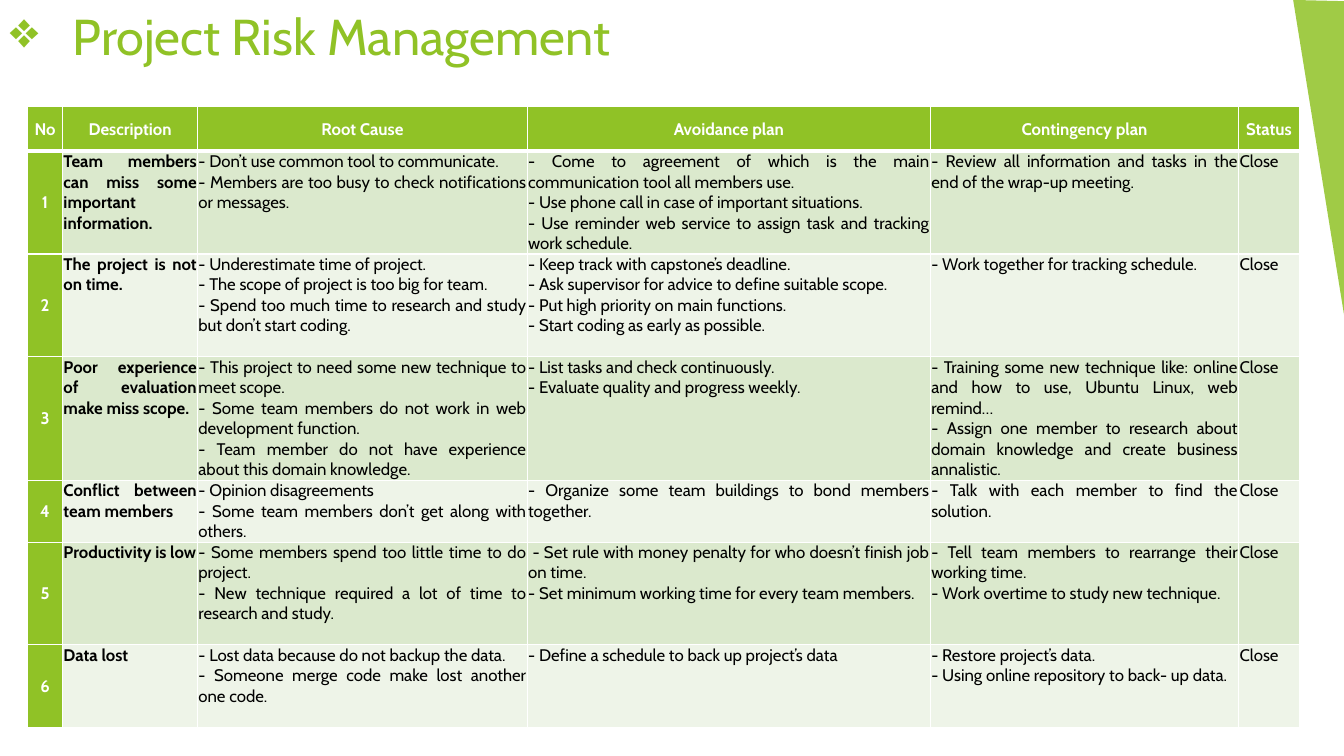
from lxml.etree import SubElement as Sub
from pptx import Presentation
from pptx.dml.color import RGBColor
from pptx.enum.text import MSO_ANCHOR as Anchor, PP_ALIGN as Align
from pptx.oxml.ns import qn
from pptx.util import Cm, Pt

GREEN = RGBColor(0x90, 0xC2, 0x26)
DARK = RGBColor(0xDB, 0xE9, 0xCD)
LIGHT = RGBColor(0xEE, 0xF4, 0xE8)
WHITE = RGBColor(0xFF, 0xFF, 0xFF)
BLACK = RGBColor(0, 0, 0)
FONT = "Cabin"

HEADS = ["No", "Description", "Root Cause", "Avoidance plan", "Contingency plan", "Status"]
WIDTHS = [0.89, 3.4, 8.31, 10.16, 7.77, 1.52]
HEIGHTS = [1.12, 2.59, 2.59, 3.12, 1.55, 2.59, 2.08]
RISKS = [
    ["Team members can miss some important information.",
     "- Don’t use common tool to communicate.\n"
     "- Members are too busy to check notifications or messages.",
     "- Come to agreement of which is the main communication tool all members use.\n"
     "- Use phone call in case of important situations.\n"
     "- Use reminder web service to assign task and tracking work schedule.",
     "- Review all information and tasks in the end of the wrap-up meeting."],
    ["The project is not on time.",
     "- Underestimate time of project.\n"
     "- The scope of project is too big for team.\n"
     "- Spend too much time to research and study but don’t start coding.",
     "- Keep track with capstone’s deadline.\n"
     "- Ask supervisor for advice to define suitable scope.\n"
     "- Put high priority on main functions.\n"
     "- Start coding as early as possible.",
     "- Work together for tracking schedule."],
    ["Poor experience of evaluation make miss scope.",
     "- This project to need some new technique to meet scope.\n"
     "- Some team members do not work in web development function.\n"
     "- Team member do not have experience about this domain knowledge.",
     "- List tasks and check continuously.\n"
     "- Evaluate quality and progress weekly.",
     "- Training some new technique like: online and how to use, Ubuntu Linux, web remind…\n"
     "- Assign one member to research about domain knowledge and create business annalistic."],
    ["Conflict between team members",
     "- Opinion disagreements\n"
     "- Some team members don’t get along with others.",
     "- Organize some team buildings to bond members together.",
     "- Talk with each member to find the solution."],
    ["Productivity is low",
     "- Some members spend too little time to do project.\n"
     "- New technique required a lot of time to research and study.",
     " - Set rule with money penalty for who doesn’t finish job on time.\n"
     "- Set minimum working time for every team members.",
     "- Tell team members to rearrange their working time.\n"
     "- Work overtime to study new technique."],
    ["Data lost",
     "- Lost data because do not backup the data.\n"
     "- Someone merge code make lost another one code.",
     "- Define a schedule to back up project’s data",
     "- Restore project’s data.\n"
     "- Using online repository to back- up data."],
]


def style(par, size, color, bold=False):
    font = par.font
    font.name, font.size, font.bold = FONT, Pt(size), bold
    font.color.rgb = color


def add_edge(cell, side, width):
    line = Sub(cell._tc.get_or_add_tcPr(), qn(f"a:ln{side}"), w=str(Pt(width)))
    fill = Sub(line, qn("a:solidFill"))
    Sub(fill, qn("a:srgbClr"), val=str(WHITE))


prs = Presentation()
prs.slide_width, prs.slide_height = Cm(33.87), Cm(19.05)
slide = prs.slides.add_slide(prs.slide_layouts[6])
shapes = slide.shapes

# Corner wedge
pen = shapes.build_freeform(Cm(33.87), Cm(7.92))
pen.add_line_segments([(Cm(32.59), 0), (Cm(33.87), Cm(0.03))])
wedge = pen.convert_to_shape()
wedge.shadow.inherit = False
wedge.fill.solid()
wedge.fill.fore_color.rgb = GREEN
wedge.line.fill.background()
tint = wedge._element.spPr.find(f"{qn('a:solidFill')}/{qn('a:srgbClr')}")
Sub(tint, qn("a:alpha"), val="85000")

# Title
title = shapes.add_textbox(0, 0, Cm(23.88), Cm(1.85))
frame = title.text_frame
frame.word_wrap = True
frame.text = "Project Risk Management"
par = frame.paragraphs[0]
props = par._p.get_or_add_pPr()
props.set("marL", str(Cm(1.58)))
props.set("indent", str(-Cm(1.58)))
Sub(props, qn("a:buChar"), char="❖")
style(par, 36, GREEN)

# Risk table
grid = shapes.add_table(len(HEIGHTS), len(WIDTHS), Cm(0.69), Cm(2.69),
                        Cm(sum(WIDTHS)), Cm(sum(HEIGHTS))).table
for col, width in zip(grid.columns, WIDTHS):
    col.width = Cm(width)
for row, height in zip(grid.rows, HEIGHTS):
    row.height = Cm(height)

rows = [HEADS] + [[str(n), *risk, "Close"] for n, risk in enumerate(RISKS, 1)]
for r, row in enumerate(rows):
    for c, text in enumerate(row):
        cell = grid.cell(r, c)
        key = r == 0 or c == 0
        cell.margin_left = cell.margin_right = Cm(0.02)
        cell.margin_top = cell.margin_bottom = 0
        cell.vertical_anchor = Anchor.MIDDLE if key else Anchor.TOP
        for side in "LRTB":
            thick = (r, side) in [(0, "B"), (1, "T")]
            add_edge(cell, side, 3 if thick else 1)
        cell.fill.solid()
        cell.fill.fore_color.rgb = GREEN if key else DARK if r % 2 else LIGHT
        cell.text_frame.text = text
        for par in cell.text_frame.paragraphs:
            if key:
                par.alignment = Align.CENTER
            else:
                par.alignment = Align.LEFT if c == 5 else Align.JUSTIFY
            style(par, 12, WHITE if key else BLACK, key or c == 1)

prs.save("out.pptx")
